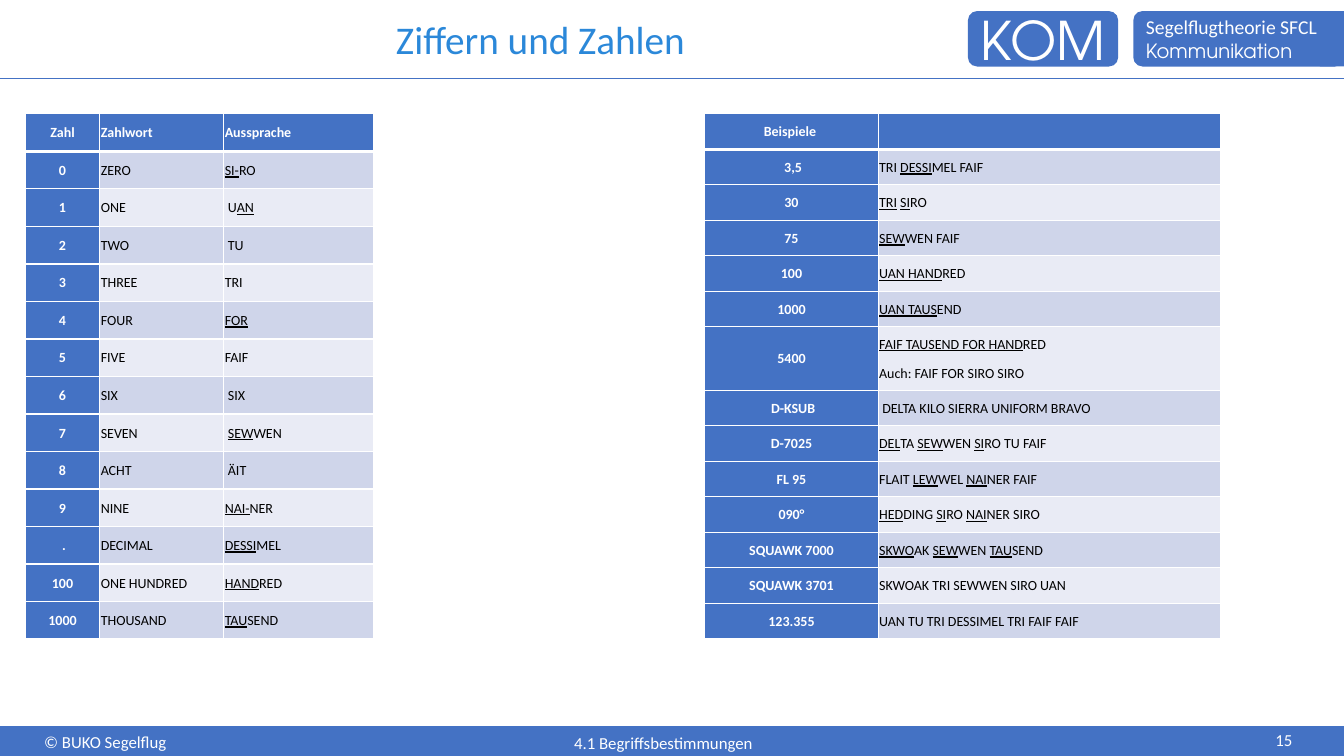
"""Build the slide on digits and numbers in radio speech."""
from lxml import etree
from pptx import Presentation
from pptx.dml.color import RGBColor
from pptx.enum.shapes import MSO_CONNECTOR, MSO_SHAPE
from pptx.enum.text import MSO_ANCHOR, PP_ALIGN
from pptx.oxml.ns import qn
from pptx.util import Inches, Pt

LINE = MSO_CONNECTOR.STRAIGHT
RECT = MSO_SHAPE.RECTANGLE
ROUND = MSO_SHAPE.ROUNDED_RECTANGLE
MID, TOP = MSO_ANCHOR.MIDDLE, MSO_ANCHOR.TOP
LEFT, CENTER = PP_ALIGN.LEFT, PP_ALIGN.CENTER

COLORS = {"blue": "4472C4", "title": "2B88D9", "white": "FFFFFF",
          "black": "000000", "dark": "CFD5EA", "light": "E9EBF5"}
BODY, LOGO = "Calibri", "TeX Gyre Adventor"

DIGITS = [
    ("Zahl", "Zahlwort", "Aussprache"),
    ("0", "ZERO", "_SI-_RO"),
    ("1", "ONE", " U_AN_"),
    ("2", "TWO", " TU"),
    ("3", "THREE", "TRI"),
    ("4", "FOUR", "_FOR_"),
    ("5", "FIVE", "FAIF"),
    ("6", "SIX", " SIX"),
    ("7", "SEVEN", " _SEW_WEN"),
    ("8", "ACHT", " ÄIT"),
    ("9", "NINE", "_NAI-_NER"),
    (" .", "DECIMAL", "_DESSI_MEL"),
    ("100", "ONE HUNDRED", "_HAND_RED"),
    ("1000", "THOUSAND", "_TAU_SEND"),
]
SAMPLES = [
    ("Beispiele ", ""),
    (" 3,5", "TRI _DESSI_MEL FAIF"),
    ("30", "_TRI_ _SI_RO"),
    ("75", "_SEW_WEN FAIF"),
    ("100", "_UAN HAND_RED"),
    ("1000", "_UAN TAUS_END"),
    ("5400", "_FAIF TAUSEND FOR HAND_RED\nAuch: FAIF FOR SIRO SIRO"),
    (" D-KSUB", " DELTA KILO SIERRA UNIFORM BRAVO"),
    ("D-7025", "_DEL_TA _SEW_WEN _SI_RO TU FAIF"),
    ("FL 95", "FLAIT _LEW_WEL _NAI_NER FAIF"),
    ("090°", "_HED_DING _SI_RO _NAI_NER SIRO"),
    ("SQUAWK 7000", "_SKWO_AK _SEW_WEN _TAU_SEND"),
    ("SQUAWK 3701", "SKWOAK TRI SEWWEN SIRO UAN"),
    ("123.355", "UAN TU TRI DESSIMEL TRI FAIF FAIF"),
]


class Deck:
    """Hold the style and the current slide."""

    def __init__(self, prs):
        self.slide = prs.slides.add_slide(prs.slide_layouts[6])
        self.shapes = self.slide.shapes

    def color(self, name):
        return RGBColor.from_string(COLORS[name])

    def style(self, part, form):
        for key, val in form.items():
            setattr(part, key, val)

    def words(self, para, text, color, size, name=BODY, bold=False, **form):
        self.style(para, form)
        for num, piece in enumerate(text.split("_")):
            if piece:
                run = para.add_run()
                run.text = piece
                self.style(run.font, {"size": Pt(size), "name": name, "bold": bold,
                                      "underline": num % 2 == 1})
                run.font.color.rgb = self.color(color)

    def block(self, kind, box):
        shape = self.shapes.add_shape(kind, *map(Inches, box))
        shape.shadow.inherit = False
        shape.fill.solid()
        shape.fill.fore_color.rgb = self.color("blue")
        shape.line.fill.background()
        return shape

    def badge(self, box, lines, align):
        frame = self.block(ROUND, box).text_frame
        self.style(frame, {"word_wrap": False, "vertical_anchor": MID})
        for num, (text, size, name) in enumerate(lines):
            para = frame.add_paragraph() if num else frame.paragraphs[0]
            self.words(para, text, "white", size, name, alignment=align)

    def label(self, box, text, color, size, anchor=TOP, wrap=True, **form):
        frame = self.shapes.add_textbox(*map(Inches, box)).text_frame
        self.style(frame, {"word_wrap": wrap, "vertical_anchor": anchor})
        self.words(frame.paragraphs[0], text, color, size, **form)

    def rule(self, top):
        line = self.shapes.add_connector(LINE, 0, Inches(top), Inches(13.33), Inches(top))
        line.line.color.rgb = self.color("blue")
        line.line.width = Pt(1.25)
        etree.SubElement(line._element.spPr, qn("a:effectLst"))

    def border(self, cell, head):
        props = cell._tc.get_or_add_tcPr()
        for num, side in enumerate("LRTB"):
            thick = 3 if head and side == "B" else 1
            edge = etree.Element(qn(f"a:ln{side}"), w=str(Pt(thick)))
            fill = etree.SubElement(edge, qn("a:solidFill"))
            etree.SubElement(fill, qn("a:srgbClr"), val=COLORS["white"])
            props.insert(num, edge)

    def cell(self, cell, text, row, col):
        key = row == 0 or col == 0
        shade = "blue" if key else "dark" if row % 2 else "light"
        gap = Inches(0.01)
        self.style(cell, {"margin_left": gap, "margin_right": gap, "margin_top": gap,
                          "margin_bottom": gap, "vertical_anchor": MID})
        cell.fill.solid()
        cell.fill.fore_color.rgb = self.color(shade)
        self.border(cell, row == 0)
        if not text:
            return
        for num, line in enumerate(text.split("\n")):
            frame = cell.text_frame
            para = frame.add_paragraph() if num else frame.paragraphs[0]
            self.words(para, line, "white" if key else "black", 10, bold=key,
                       alignment=LEFT if col else CENTER,
                       line_spacing=1.07, space_after=Pt(8))

    def table(self, left, rows, widths, heights):
        box = (left, 1.13, sum(widths), sum(heights))
        table = self.shapes.add_table(len(rows), len(widths), *map(Inches, box)).table
        self.style(table, {"first_row": False, "horz_banding": False})
        for col, width in zip(table.columns, widths):
            col.width = Inches(width)
        for num, (texts, height) in enumerate(zip(rows, heights)):
            table.rows[num].height = Inches(height)
            for col, text in enumerate(texts):
                self.cell(table.cell(num, col), text, num, col)


def main():
    prs = Presentation()
    prs.slide_width, prs.slide_height = Inches(13.33), Inches(7.5)
    deck = Deck(prs)
    deck.block(RECT, (0, 7.21, 13.33, 0.31))
    deck.label((0.34, 7.21, 1.42, 0.31), "© BUKO Segelflug", "white", 12, wrap=False)
    deck.rule(7.21)
    deck.badge((9.6, 0.11, 1.49, 0.55), [("KOM", 38, LOGO)], CENTER)
    deck.badge((11.24, 0.11, 2.09, 0.55),
               [("Segelflugtheorie SFCL", 14, BODY), ("Kommunikation", 14, LOGO)], LEFT)
    deck.rule(0.78)
    deck.block(RECT, (13.09, 0.11, 0.25, 0.55))
    deck.label((1.04, 0.14, 8.64, 0.55), "Ziffern und Zahlen", "title", 28, MID,
               alignment=CENTER, line_spacing=0.9)

    full, tall = 5.21, 0.63
    deck.table(0.25, DIGITS, [0.74, 1.23, 1.49], [full / len(DIGITS)] * len(DIGITS))
    step = (full - tall) / (len(SAMPLES) - 1)
    heights = [tall if "\n" in word else step for _, word in SAMPLES]
    deck.table(6.99, SAMPLES, [1.72, 3.4], heights)

    deck.label((12.55, 7.19, 0.59, 0.31), "15", "white", 12)
    deck.label((1.66, 7.24, 9.84, 0.31), "4.1 Begriffsbestimmungen", "white", 12,
               alignment=CENTER, line_spacing=0.9)
    prs.save("out.pptx")


if __name__ == "__main__":
    main()
